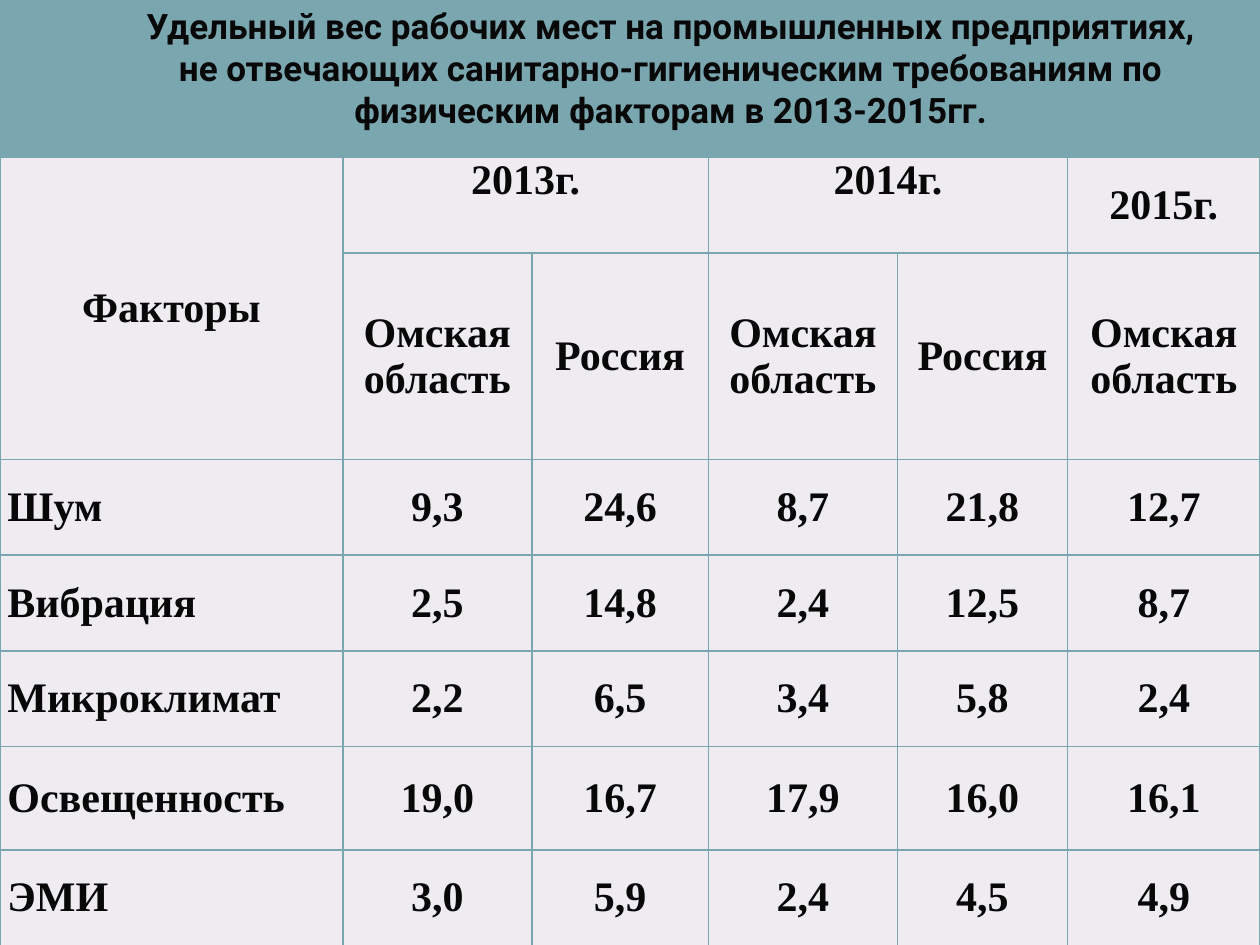
import pptx
import pptx.util
import pptx.dml.color
import pptx.enum.text
import pptx.oxml
import pptx.oxml.ns

Cm, Pt = pptx.util.Cm, pptx.util.Pt
ALIGN = pptx.enum.text.PP_ALIGN
ANCHOR = pptx.enum.text.MSO_ANCHOR

TITLE = ("Удельный вес рабочих мест на промышленных предприятиях, "
         "не отвечающих санитарно-гигиеническим требованиям по "
         "физическим факторам в 2013-2015гг.")
REGION, NATION = "Омская\nобласть", "Россия"
ROWS = [
    ["Факторы", "2013г.", "", "2014г.", "", "2015г."],
    ["", REGION, NATION, REGION, NATION, REGION],
    ["Шум", "9,3", "24,6", "8,7", "21,8", "12,7"],
    ["Вибрация", "2,5", "14,8", "2,4", "12,5", "8,7"],
    ["Микроклимат", "2,2", "6,5", "3,4", "5,8", "2,4"],
    ["Освещенность", "19,0", "16,7", "17,9", "16,0", "16,1"],
    ["ЭМИ", "3,0", "5,9", "2,4", "4,5", "4,9"],
]
MERGES = [((0, 0), (1, 0)), ((0, 1), (0, 2)), ((0, 3), (0, 4))]
HEADS = 2
WIDTHS = [6.91, 3.81, 3.56, 3.81, 3.43, 3.88]
HEIGHTS = [1.93, 4.16, 1.93, 1.93, 1.93, 2.08, 1.93]
TOP = 3.17

THEME = {
    "back": "7AA6B0", "cell": "EEECF0", "ink": "080808", "line": "7AA6B0",
    "title": ("Roboto", 20), "body": ("Times New Roman", 24),
}


def color(name):
    return pptx.dml.color.RGBColor.from_string(THEME[name])


def write(frame, text, role, align):
    """Fill a text frame, one paragraph for each line of text."""
    frame.text = text
    for para in frame.paragraphs:
        para.alignment = align
        font = para.font
        font.name, size = THEME[role]
        font.size = Pt(size)
        font.bold = True
        font.color.rgb = color("ink")


def border(cell):
    props = cell._tc.get_or_add_tcPr()
    for side in "LRTB":
        props.append(pptx.oxml.parse_xml(
            f'<a:ln{side} {pptx.oxml.ns.nsdecls("a")} w="{Pt(1)}"><a:solidFill>'
            f'<a:srgbClr val="{THEME["line"]}"/></a:solidFill></a:ln{side}>'))


def add_title(slide):
    title = slide.shapes.title
    title.left, title.top = Cm(2.31), Cm(0.2)
    title.width, title.height = Cm(22.43), Cm(2.97)
    frame = title.text_frame
    frame.word_wrap = True
    frame.auto_size = pptx.enum.text.MSO_AUTO_SIZE.NONE
    frame.vertical_anchor = ANCHOR.MIDDLE
    frame.margin_top, frame.margin_bottom = 0, Cm(0.66)
    write(frame, TITLE, "title", ALIGN.CENTER)


def add_grid(slide):
    table = slide.shapes.add_table(
        len(ROWS), len(WIDTHS), 0, Cm(TOP),
        Cm(sum(WIDTHS)), Cm(sum(HEIGHTS))).table
    table.first_row = table.horz_banding = False
    for col, width in zip(table.columns, WIDTHS):
        col.width = Cm(width)
    for row, height in zip(table.rows, HEIGHTS):
        row.height = Cm(height)
    for first, last in MERGES:
        table.cell(*first).merge(table.cell(*last))
    for r, row in enumerate(ROWS):
        for c, text in enumerate(row):
            cell = table.cell(r, c)
            border(cell)
            cell.fill.solid()
            cell.fill.fore_color.rgb = color("cell")
            cell.margin_left = cell.margin_right = Cm(0.15)
            cell.margin_top = cell.margin_bottom = 0
            wide = cell.is_merge_origin and cell.span_width > 1
            cell.vertical_anchor = ANCHOR.TOP if wide else ANCHOR.MIDDLE
            label = c == 0 and r >= HEADS
            write(cell.text_frame, text, "body",
                  ALIGN.LEFT if label else ALIGN.CENTER)


def main():
    deck = pptx.Presentation()
    deck.slide_width, deck.slide_height = Cm(25.4), Cm(19.05)
    slide = deck.slides.add_slide(deck.slide_layouts[5])
    slide.background.fill.solid()
    slide.background.fill.fore_color.rgb = color("back")
    add_title(slide)
    add_grid(slide)
    deck.save("out.pptx")


if __name__ == "__main__":
    main()
